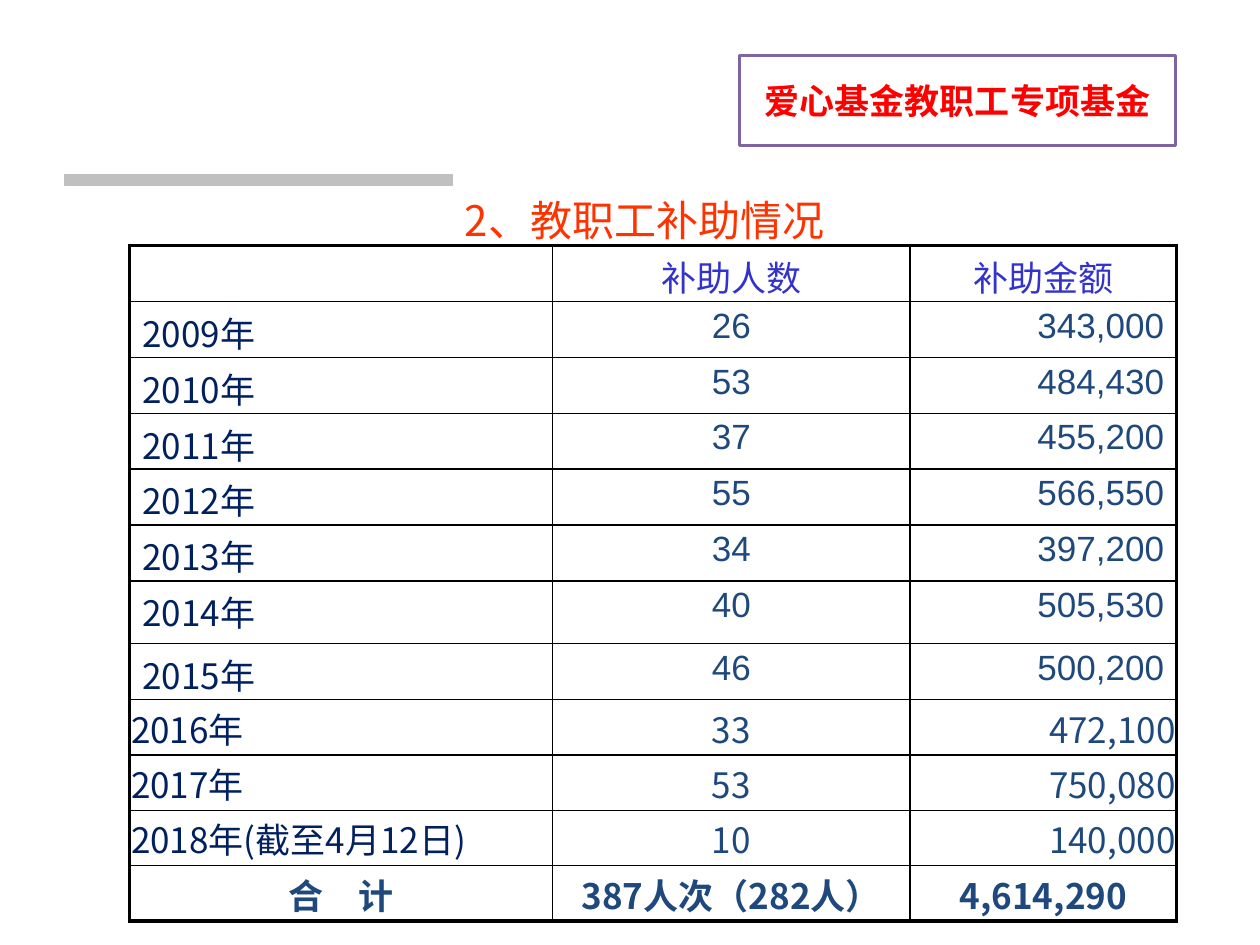
from lxml import etree
from pptx import Presentation
from pptx.dml.color import RGBColor
from pptx.enum.shapes import MSO_SHAPE
from pptx.enum.text import MSO_ANCHOR, MSO_AUTO_SIZE, PP_ALIGN
from pptx.oxml.ns import qn
from pptx.util import Inches, Pt

LEFT, CENTER, RIGHT = PP_ALIGN.LEFT, PP_ALIGN.CENTER, PP_ALIGN.RIGHT
TOP, MIDDLE = MSO_ANCHOR.TOP, MSO_ANCHOR.MIDDLE
RECTANGLE = MSO_SHAPE.RECTANGLE
TITLE_ONLY = 5

WIDTH, HEIGHT = 10, 7.5
CJK, LATIN = "Noto Sans CJK SC", "Arial"
BLUE, NAVY, RED = "1F497D", "002060", "FF0000"
THIN, THICK = 1, 2.25

HEADERS = ["", "补助人数", "补助金额"]
YEARS = [
    ("2009年", "26", "343,000"),
    ("2010年", "53", "484,430"),
    ("2011年", "37", "455,200"),
    ("2012年", "55", "566,550"),
    ("2013年", "34", "397,200"),
    ("2014年", "40", "505,530"),
    ("2015年", "46", "500,200"),
    ("2016年", "33", "472,100"),
    ("2017年", "53", "750,080"),
    ("2018年(截至4月12日)", "10", "140,000"),
]
TOTALS = ["合　计", "387人次（282人）", "4,614,290"]
FIRST_COMPACT_ROW = 8
COLUMN_WEIGHTS = [3.36, 2.84, 2.12]
ROW_WEIGHTS = [0.44] * 6 + [0.5] + [0.44] * 5


def color(value):
    return RGBColor.from_string(value)


def place(box):
    """Turn shares of the slide (left, top, width, height) into lengths."""
    scales = (WIDTH, HEIGHT, WIDTH, HEIGHT)
    return [Inches(share * scale) for share, scale in zip(box, scales)]


def divide(total, weights):
    return [int(total * weight / sum(weights)) for weight in weights]


def set_attributes(target, values):
    for name, value in values.items():
        setattr(target, name, value)


def add_run(paragraph, text, size, font_name, text_color, bold=False):
    run = paragraph.add_run()
    run.text = text
    values = {"size": Pt(size), "name": font_name, "bold": bold}
    set_attributes(run.font, values)
    run.font.color.rgb = color(text_color)
    east_asian = etree.SubElement(run.font._element, qn("a:ea"))
    east_asian.set("typeface", CJK)


def add_rectangle(slide, box, fill, line, line_width):
    shape = slide.shapes.add_shape(RECTANGLE, *place(box))
    shape.shadow.inherit = False
    shape.fill.solid()
    shape.fill.fore_color.rgb = color(fill)
    shape.line.color.rgb = color(line)
    shape.line.width = Pt(line_width)
    return shape


def format_title(slide, box):
    title = slide.shapes.title
    position = dict(zip(("left", "top", "width", "height"), place(box)))
    set_attributes(title, position)
    set_attributes(title.text_frame, {
        "auto_size": MSO_AUTO_SIZE.NONE, "vertical_anchor": TOP,
        "word_wrap": True})
    paragraph = title.text_frame.paragraphs[0]
    set_attributes(paragraph, {"alignment": CENTER, "line_spacing": 1.6})
    add_run(paragraph, "2、", 24, CJK, "FF3300")
    add_run(paragraph, "教职工补助情况", 24, "Calibri", "FF3300")


def add_fund_label(slide, box):
    label = add_rectangle(slide, box, "FFFFFF", "8064A2", 2)
    set_attributes(label.text_frame, {
        "vertical_anchor": MIDDLE, "word_wrap": True})
    paragraph = label.text_frame.paragraphs[0]
    paragraph.alignment = CENTER
    add_run(paragraph, "爱心基金教职工专项基金", 20, LATIN, RED, True)


def set_borders(cell, widths):
    """Draw black borders; widths are in points for left, right, top, bottom."""
    properties = cell._tc.get_or_add_tcPr()
    for index, (side, width) in enumerate(zip("LRTB", widths)):
        line = etree.Element(qn(f"a:ln{side}"), w=str(Pt(width)))
        fill = etree.SubElement(line, qn("a:solidFill"))
        etree.SubElement(fill, qn("a:srgbClr"), val="000000")
        properties.insert(index, line)


def cell_style(row, column):
    """Return alignment, font name, colour and weight for a cell."""
    if row == 0:
        return CENTER, LATIN, "3333CC", False
    if row == len(YEARS) + 1:
        return CENTER, CJK, BLUE, True
    if column == 0:
        return LEFT, CJK, NAVY, False
    font_name = CJK if row >= FIRST_COMPACT_ROW else LATIN
    return (CENTER if column == 1 else RIGHT), font_name, BLUE, False


def fill_cell(cell, text, row, column):
    compact = row >= FIRST_COMPACT_ROW
    side, top = (0.01, 0.01) if compact else (0.1, 0.04)
    set_attributes(cell, {
        "margin_left": Inches(side), "margin_right": Inches(side),
        "margin_top": Inches(top), "margin_bottom": 0,
        "vertical_anchor": MIDDLE if compact else TOP})
    cell.fill.background()
    paragraph = cell.text_frame.paragraphs[0]
    alignment, font_name, text_color, bold = cell_style(row, column)
    paragraph.alignment = alignment
    if not compact:
        paragraph.space_before = Pt(4)
    if text:
        add_run(paragraph, text, 20, font_name, text_color, bold)
    else:
        paragraph.font.size = Pt(20)


def add_subsidy_table(slide, box):
    rows = [HEADERS, *YEARS, TOTALS]
    left, top, width, height = place(box)
    table = slide.shapes.add_table(
        len(rows), len(HEADERS), left, top, width, height).table
    set_attributes(table, {"first_row": False, "horz_banding": False})
    for column, size in zip(table.columns, divide(width, COLUMN_WEIGHTS)):
        column.width = size
    for row, size in zip(table.rows, divide(height, ROW_WEIGHTS)):
        row.height = size
    last_row, last_column = len(rows) - 1, len(HEADERS) - 1
    for row, values in enumerate(rows):
        for column, text in enumerate(values):
            cell = table.cell(row, column)
            fill_cell(cell, text, row, column)
            outer = (column == 0, column == last_column,
                     row == 0, row == last_row)
            set_borders(cell, [THICK if edge else THIN for edge in outer])


def main():
    presentation = Presentation()
    set_attributes(presentation, {
        "slide_width": Inches(WIDTH), "slide_height": Inches(HEIGHT)})
    layout = presentation.slide_layouts[TITLE_ONLY]
    slide = presentation.slides.add_slide(layout)
    add_rectangle(slide, (0.051, 0.185, 0.308, 0.011), "C0C0C0", "C0C0C0", 0.75)
    format_title(slide, (0.039, 0.167, 0.945, 0.185))
    add_subsidy_table(slide, (0.103, 0.26, 0.831, 0.711))
    add_fund_label(slide, (0.587, 0.059, 0.346, 0.095))
    presentation.save("out.pptx")


if __name__ == "__main__":
    main()
